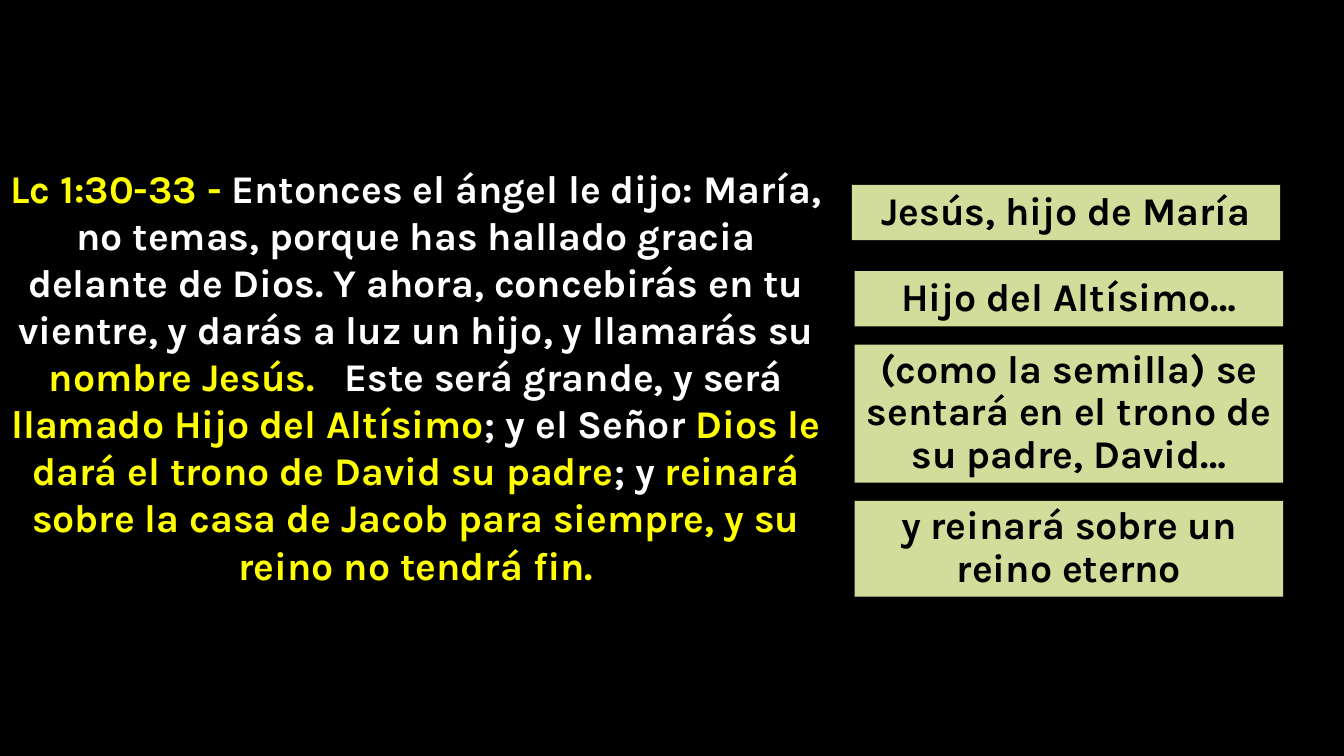
from pptx import Presentation
from pptx.dml.color import RGBColor
from pptx.enum import shapes, text
from pptx.util import Pt

BLACK = RGBColor(0x00, 0x00, 0x00)
WHITE = RGBColor(0xFF, 0xFF, 0xFF)
YELLOW = RGBColor(0xFF, 0xFF, 0x00)
GREEN = RGBColor(0xD2, 0xDD, 0x9B)


def add_span(para, wording, color):
    span = para.add_run()
    span.text = wording
    span.font.name = "Karla"
    span.font.size = Pt(28)
    span.font.bold = True
    span.font.color.rgb = color


deck = Presentation()
deck.slide_width = Pt(960)
deck.slide_height = Pt(540)
page = deck.slides.add_slide(deck.slide_layouts[6])
page.background.fill.solid()
page.background.fill.fore_color.rgb = BLACK

# Bible passage, key phrases in yellow
verse = [
    ("Lc 1:30-33 - ", YELLOW),
    ("Entonces el ángel le dijo: María, no temas, porque has hallado gracia "
     "delante de Dios. Y ahora, concebirás en tu vientre, y darás a luz un hijo, "
     "y llamarás su ", WHITE),
    ("nombre Jesús.", YELLOW),
    ("   Este será grande, y será ", WHITE),
    ("llamado Hijo del Altísimo", YELLOW),
    ("; y el Señor ", WHITE),
    ("Dios le dará el trono de David su padre", YELLOW),
    ("; y ", WHITE),
    ("reinará sobre la casa de Jacob para siempre, y su reino no tendrá fin.", YELLOW),
]
passage = page.shapes.add_textbox(Pt(0), Pt(113.8), Pt(594), Pt(346.3))
passage.text_frame.word_wrap = True
para = passage.text_frame.paragraphs[0]
para.alignment = text.PP_ALIGN.CENTER
for wording, color in verse:
    add_span(para, wording, color)

# Promises: left, top, height, line spacing, wording
promises = [
    (608.4, 132, 39.6, 0.95, "Jesús, hijo de María"),
    (610.5, 193.6, 39.6, 0.95, "Hijo del Altísimo…"),
    (610.5, 246.2, 98.6, 0.9,
     "(como la semilla) se sentará en el trono de su padre, David…"),
    (610.5, 357.8, 68.4, 0.9, "y reinará sobre un reino eterno"),
]
for left, top, height, spacing, wording in promises:
    box = page.shapes.add_shape(
        shapes.MSO_SHAPE.RECTANGLE, Pt(left), Pt(top), Pt(306), Pt(height))
    box.shadow.inherit = False
    box.fill.solid()
    box.fill.fore_color.rgb = GREEN
    box.line.fill.background()
    frame = box.text_frame
    frame.word_wrap = True
    frame.auto_size = text.MSO_AUTO_SIZE.SHAPE_TO_FIT_TEXT
    frame.vertical_anchor = text.MSO_ANCHOR.TOP
    para = frame.paragraphs[0]
    para.alignment = text.PP_ALIGN.CENTER
    para.line_spacing = spacing
    add_span(para, wording, BLACK)

deck.save("out.pptx")
